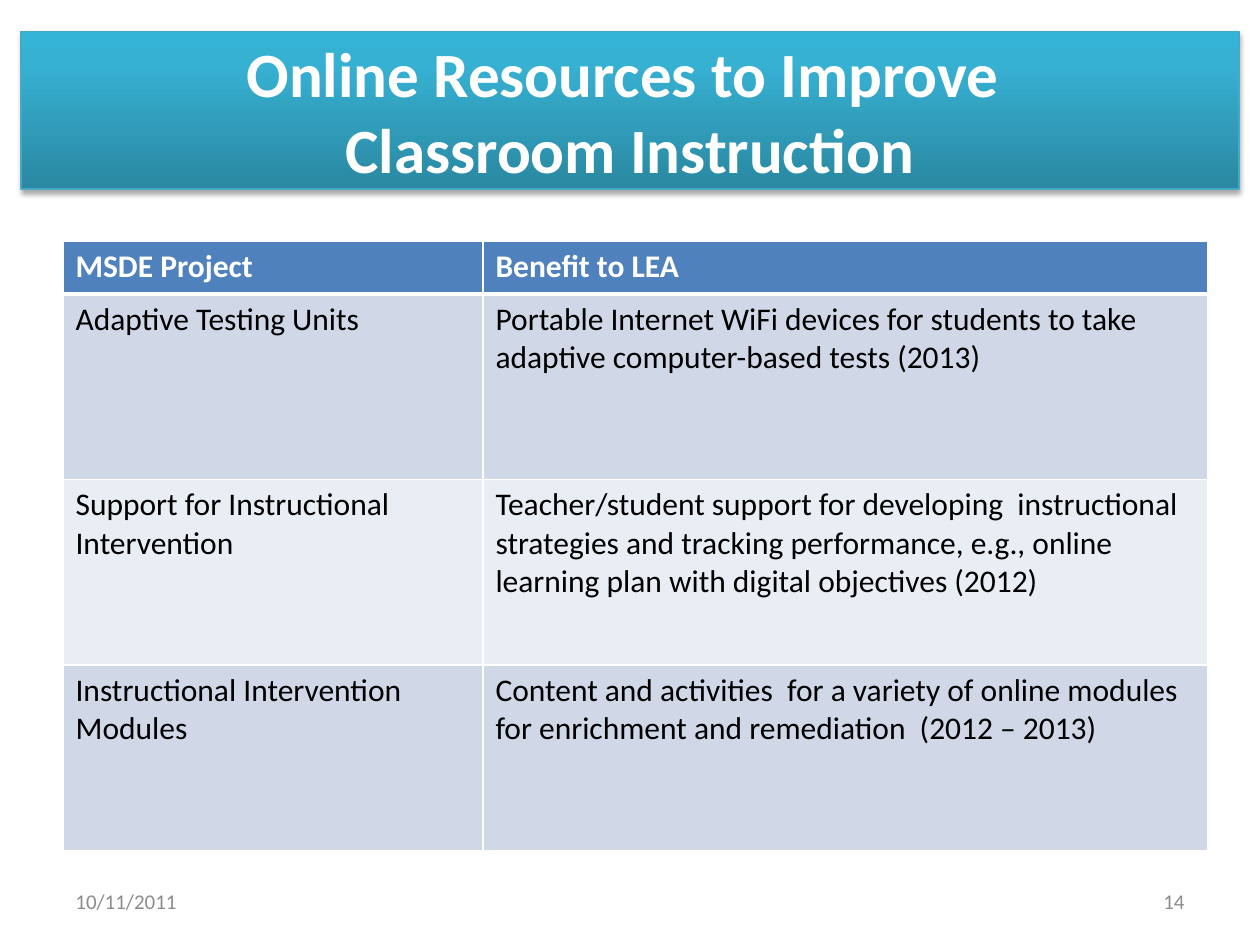
from pptx import Presentation
from pptx.dml.color import RGBColor
from pptx.enum.shapes import MSO_SHAPE
from pptx.enum.text import MSO_ANCHOR, PP_ALIGN
from pptx.oxml import parse_xml
from pptx.oxml.ns import nsdecls, qn
from pptx.util import Pt

RECTANGLE = MSO_SHAPE.RECTANGLE
MIDDLE = MSO_ANCHOR.MIDDLE
LEFT, CENTER, RIGHT = PP_ALIGN.LEFT, PP_ALIGN.CENTER, PP_ALIGN.RIGHT

# Content (\v is a line break)
TITLE = "Online Resources to Improve \vClassroom Instruction"
PROJECTS = [
    ("MSDE Project", "Benefit to LEA"),
    ("Adaptive Testing Units",
     "Portable Internet WiFi devices for students to take adaptive "
     "computer-based tests (2013)"),
    ("Support for Instructional Intervention",
     "Teacher/student support for developing  instructional strategies and "
     "tracking performance, e.g., online learning plan with digital "
     "objectives (2012)"),
    ("Instructional Intervention Modules",
     "Content and activities  for a variety of online modules for enrichment "
     "and remediation  (2012 – 2013)"),
]
FOOTERS = [("10/11/2011", 36, LEFT), ("14", 516, RIGHT)]

THEME = {
    "font": "Calibri",
    "title_size": 36, "table_size": 18, "footer_size": 12,
    "light": "FFFFFF", "dark": "000000", "muted": "8C8C8C",
    "banner": [(0, "2A88A2"), (80, "37B1D2"), (100, "34B4D6")],
    "banner_line": "46AAC5",
    "header": "4F81BD", "bands": ("D0D8E8", "E9EDF4"),
}

# Layout in points
BANNER_BOX = (12, 18, 696, 90)
TABLE_LEFT, TABLE_TOP = 36, 138
COLUMN_WIDTHS = (240, 414)
HEADER_HEIGHT, ROW_HEIGHT = 30, 106
FOOTER_TOP, FOOTER_WIDTH, FOOTER_HEIGHT = 500.5, 168, 28.75


def write(frame, text, size, color, bold=False, align=LEFT):
    frame.word_wrap = True
    paragraph = frame.paragraphs[0]
    paragraph.text = text
    paragraph.alignment = align
    for run in paragraph.runs:
        run.font.name = THEME["font"]
        run.font.size = Pt(size)
        run.font.bold = bold
        run.font.color.rgb = RGBColor.from_string(color)


def fill_gradient(shape, stops):
    shape.fill.gradient()
    shape.fill.gradient_angle = 90
    stop_list = shape._element.spPr.find(qn("a:gradFill")).find(qn("a:gsLst"))
    for stop in list(stop_list):
        stop_list.remove(stop)
    for position, color in stops:
        stop_list.append(parse_xml(
            f'<a:gs {nsdecls("a")} pos="{position * 1000}">'
            f'<a:srgbClr val="{color}"/></a:gs>'))


def add_shadow(shape):
    shape.shadow.inherit = False
    shape._element.spPr.find(qn("a:effectLst")).append(parse_xml(
        f'<a:outerShdw {nsdecls("a")} blurRad="{Pt(3.1)}" dist="{Pt(1.8)}" '
        'dir="5400000" rotWithShape="0"><a:srgbClr val="000000">'
        '<a:alpha val="35000"/></a:srgbClr></a:outerShdw>'))


def set_borders(cell, **widths):
    properties = cell._tc.get_or_add_tcPr()
    for side, width in widths.items():
        properties.append(parse_xml(
            f'<a:ln{side} {nsdecls("a")} w="{Pt(width)}"><a:solidFill>'
            f'<a:srgbClr val="{THEME["light"]}"/></a:solidFill></a:ln{side}>'))


def add_banner(slide):
    banner = slide.shapes.add_shape(RECTANGLE, *map(Pt, BANNER_BOX))
    fill_gradient(banner, THEME["banner"])
    banner.line.color.rgb = RGBColor.from_string(THEME["banner_line"])
    banner.line.width = Pt(0.75)
    add_shadow(banner)
    banner.text_frame.vertical_anchor = MIDDLE
    write(banner.text_frame, TITLE, THEME["title_size"], THEME["light"],
          bold=True, align=CENTER)


def add_projects(slide):
    heights = [HEADER_HEIGHT] + [ROW_HEIGHT] * (len(PROJECTS) - 1)
    table = slide.shapes.add_table(
        len(PROJECTS), len(COLUMN_WIDTHS), Pt(TABLE_LEFT), Pt(TABLE_TOP),
        Pt(sum(COLUMN_WIDTHS)), Pt(sum(heights))).table
    for column, width in zip(table.columns, COLUMN_WIDTHS):
        column.width = Pt(width)
    for r, (project, height) in enumerate(zip(PROJECTS, heights)):
        table.rows[r].height = Pt(height)
        is_header = r == 0
        band = THEME["header"] if is_header else THEME["bands"][(r - 1) % 2]
        for c, text in enumerate(project):
            cell = table.cell(r, c)
            set_borders(cell, L=1, R=1, T=3 if r == 1 else 1,
                        B=3 if is_header else 1)
            cell.fill.solid()
            cell.fill.fore_color.rgb = RGBColor.from_string(band)
            write(cell.text_frame, text, THEME["table_size"],
                  THEME["light" if is_header else "dark"], bold=is_header)


def add_footers(slide):
    for text, left, align in FOOTERS:
        footer = slide.shapes.add_textbox(
            Pt(left), Pt(FOOTER_TOP), Pt(FOOTER_WIDTH), Pt(FOOTER_HEIGHT))
        footer.text_frame.vertical_anchor = MIDDLE
        write(footer.text_frame, text, THEME["footer_size"], THEME["muted"],
              align=align)


def main():
    deck = Presentation()
    deck.slide_width, deck.slide_height = Pt(720), Pt(540)
    slide = deck.slides.add_slide(deck.slide_layouts[6])
    add_banner(slide)
    add_footers(slide)
    add_projects(slide)
    deck.save("out.pptx")


if __name__ == "__main__":
    main()
